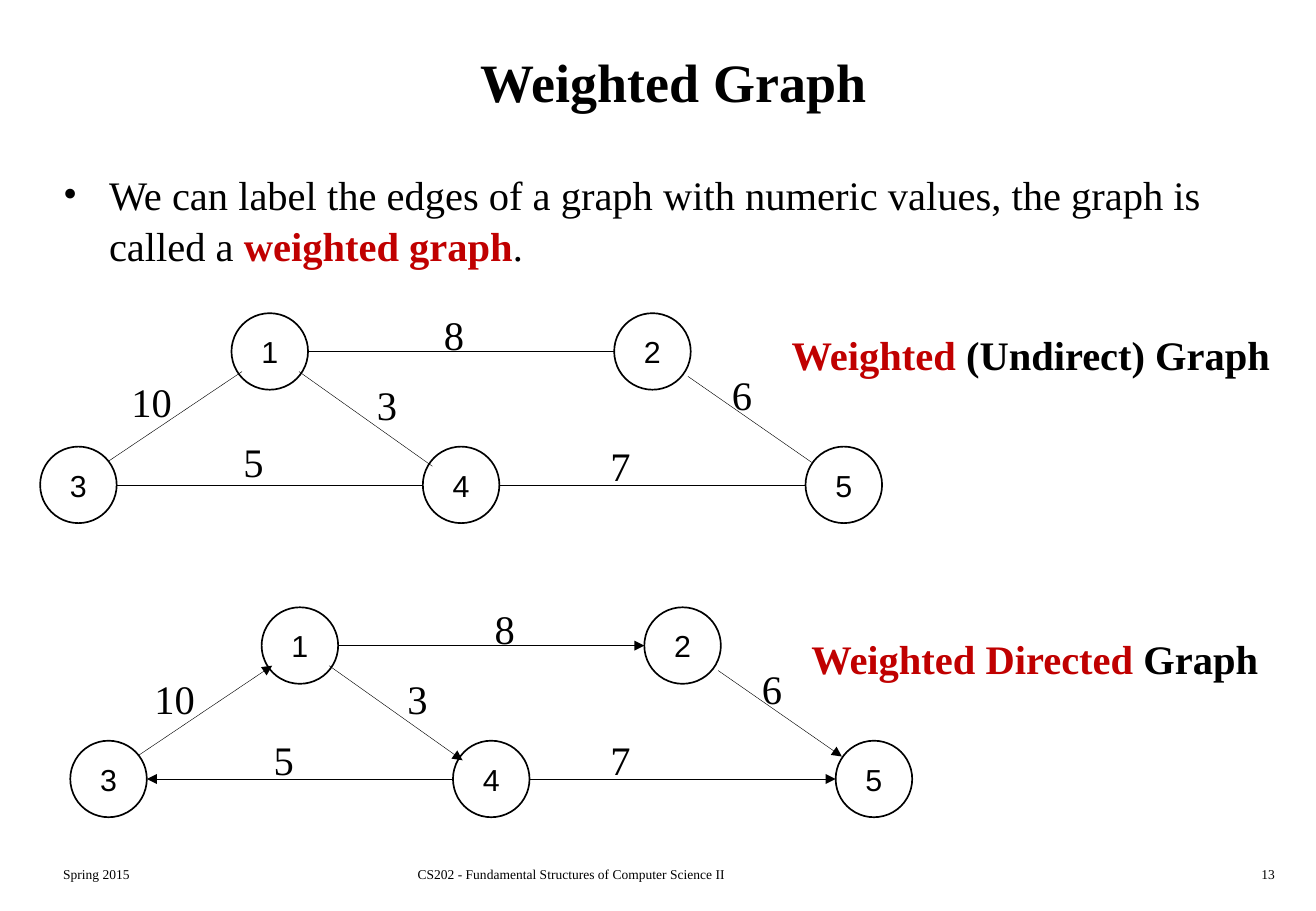
from dataclasses import dataclass
from typing import NamedTuple

from lxml.etree import SubElement
from pptx import Presentation
from pptx.dml.color import RGBColor
from pptx.enum.shapes import MSO_CONNECTOR, MSO_SHAPE
from pptx.enum.text import MSO_ANCHOR, PP_ALIGN
from pptx.oxml.ns import qn
from pptx.util import Cm, Pt


@dataclass(frozen=True)
class Theme:
    ink: RGBColor = RGBColor(0x00, 0x00, 0x00)
    accent: RGBColor = RGBColor(0xC0, 0x00, 0x00)
    paper: RGBColor = RGBColor(0xFF, 0xFF, 0xFF)
    serif: str = "Times New Roman"
    sans: str = "Arial"
    title: int = 32
    body: int = 24
    node: int = 18
    foot: int = 8
    edge: float = 0.25
    ring: float = 1


class Box(NamedTuple):
    left: float
    top: float
    width: float
    height: float


class Point(NamedTuple):
    x: float
    y: float


class Words(NamedTuple):
    text: str
    bold: bool = False
    accent: bool = False


class Weight(NamedTuple):
    text: str
    left: float
    top: float


@dataclass(frozen=True)
class Graph:
    origin: Point
    arrows: bool
    weights: list[Weight]
    caption: Box
    words: list[Words]


THEME = Theme()
LEFT, MID, RIGHT = PP_ALIGN.LEFT, PP_ALIGN.CENTER, PP_ALIGN.RIGHT
SIZE = 1.6   # node diameter
STEP = 4     # half the gap between neighbours in a row
DROP = 2.79  # from upper row to lower row

# Nodes and edges, relative to the origin of a graph
NODES = {
    "1": Point(STEP, 0), "2": Point(3 * STEP, 0),
    "3": Point(0, DROP), "4": Point(2 * STEP, DROP), "5": Point(4 * STEP, DROP),
}
HIGH, LOW = SIZE / 2, DROP + SIZE / 2
EDGES = [
    (Point(5.41, 1.22), Point(8.2, 3.2)),
    (Point(STEP + SIZE, HIGH), Point(3 * STEP, HIGH)),
    (Point(13.54, 1.32), Point(16.13, 3.12)),
    (Point(2 * STEP, LOW), Point(SIZE, LOW)),
    (Point(2 * STEP + SIZE, LOW), Point(4 * STEP, LOW)),
    (Point(1.42, 3.1), Point(4.22, 1.22)),
]

GRAPHS = [
    Graph(
        Point(0.84, 6.55), False,
        [Weight("8", 9.02, 6.35), Weight("7", 12.5, 9.09), Weight("10", 2.49, 7.75),
         Weight("5", 4.83, 9.02), Weight("3", 7.62, 7.82), Weight("6", 15.04, 7.62)],
        Box(16.3, 6.78, 10.62, 1.3),
        [Words("Weighted", True, True), Words(" (Undirect) Graph", True)],
    ),
    Graph(
        Point(1.47, 12.7), True,
        [Weight("8", 10.08, 12.5), Weight("7", 12.5, 15.24), Weight("10", 2.97, 13.97),
         Weight("5", 5.46, 15.24), Weight("3", 8.26, 13.97), Weight("6", 15.67, 13.77)],
        Box(16.71, 13.13, 9.93, 1.3),
        [Words("Weighted Directed ", True, True), Words("Graph", True)],
    ),
]


def write(shape, words: list[Words], size: int, align=LEFT, font: str = THEME.serif,
          wrap: bool = True, anchor=MSO_ANCHOR.TOP):
    frame = shape.text_frame
    frame.word_wrap = wrap
    frame.vertical_anchor = anchor
    para = frame.paragraphs[0]
    para.alignment = align
    for part in words:
        run = para.add_run()
        run.text = part.text
        run.font.name = font
        run.font.size = Pt(size)
        run.font.bold = part.bold
        run.font.color.rgb = THEME.accent if part.accent else THEME.ink
    return para


def label(slide, box: Box, words: list[Words], size: int, **look):
    shape = slide.shapes.add_textbox(*map(Cm, box))
    return write(shape, words, size, **look)


def bullet(para) -> None:
    props = para._p.get_or_add_pPr()
    props.set("marL", str(Cm(0.96)))
    props.set("indent", str(Cm(-0.96)))
    SubElement(props, qn("a:buFont"), typeface=THEME.serif)
    SubElement(props, qn("a:buChar"), char="•")


def link(slide, start: Point, end: Point, arrow: bool) -> None:
    line = slide.shapes.add_connector(MSO_CONNECTOR.STRAIGHT, *map(Cm, start + end))
    line.line.color.rgb = THEME.ink
    line.line.width = Pt(THEME.edge)
    if arrow:
        SubElement(line.line._get_or_add_ln(), qn("a:tailEnd"), type="triangle")
    SubElement(line._element.spPr, qn("a:effectLst"))


def node(slide, name: str, spot: Point) -> None:
    ring = slide.shapes.add_shape(MSO_SHAPE.OVAL, *map(Cm, Box(*spot, SIZE, SIZE)))
    ring.shadow.inherit = False
    ring.fill.background()
    ring.line.color.rgb = THEME.ink
    ring.line.width = Pt(THEME.ring)
    write(ring, [Words(name)], THEME.node, MID, THEME.sans, False, MSO_ANCHOR.MIDDLE)


def draw(slide, graph: Graph) -> None:
    def place(spot: Point) -> Point:
        return Point(graph.origin.x + spot.x, graph.origin.y + spot.y)

    for start, end in EDGES:
        link(slide, place(start), place(end), graph.arrows)
    for name, spot in NODES.items():
        node(slide, name, place(spot))
    for text, left, top in graph.weights:
        width = 0.52 + 0.42 * len(text)
        label(slide, Box(left, top, width, 1.27), [Words(text)], THEME.body,
              align=MID, wrap=False)
    label(slide, graph.caption, graph.words, THEME.body, wrap=False)


def main() -> None:
    deck = Presentation()
    deck.slide_width, deck.slide_height = Cm(27.51), Cm(19.05)
    slide = deck.slides.add_slide(deck.slide_layouts[6])
    slide.background.fill.solid()
    slide.background.fill.fore_color.rgb = THEME.paper

    # Title and statement
    label(slide, Box(1.07, 0.43, 26.04, 2.54), [Words("Weighted Graph", True)],
          THEME.title, align=MID, anchor=MSO_ANCHOR.MIDDLE)
    para = label(slide, Box(1.07, 3.38, 25.83, 2.74), [
        Words("We can label the edges of a graph with numeric values, the graph is called a "),
        Words("weighted graph", True, True), Words("."),
    ], THEME.body)
    para.line_spacing = 1.05
    bullet(para)

    # Both graphs
    for graph in GRAPHS:
        draw(slide, graph)

    # Footer
    for left, width, text, align in [
        (1.07, 5.74, "Spring 2015", LEFT),
        (8.48, 10.31, "CS202 - Fundamental Structures of Computer Science II", LEFT),
        (21.16, 5.74, "13", RIGHT),
    ]:
        label(slide, Box(left, 17.98, width, 0.64), [Words(text)], THEME.foot, align=align)

    deck.save("out.pptx")


if __name__ == "__main__":
    main()
